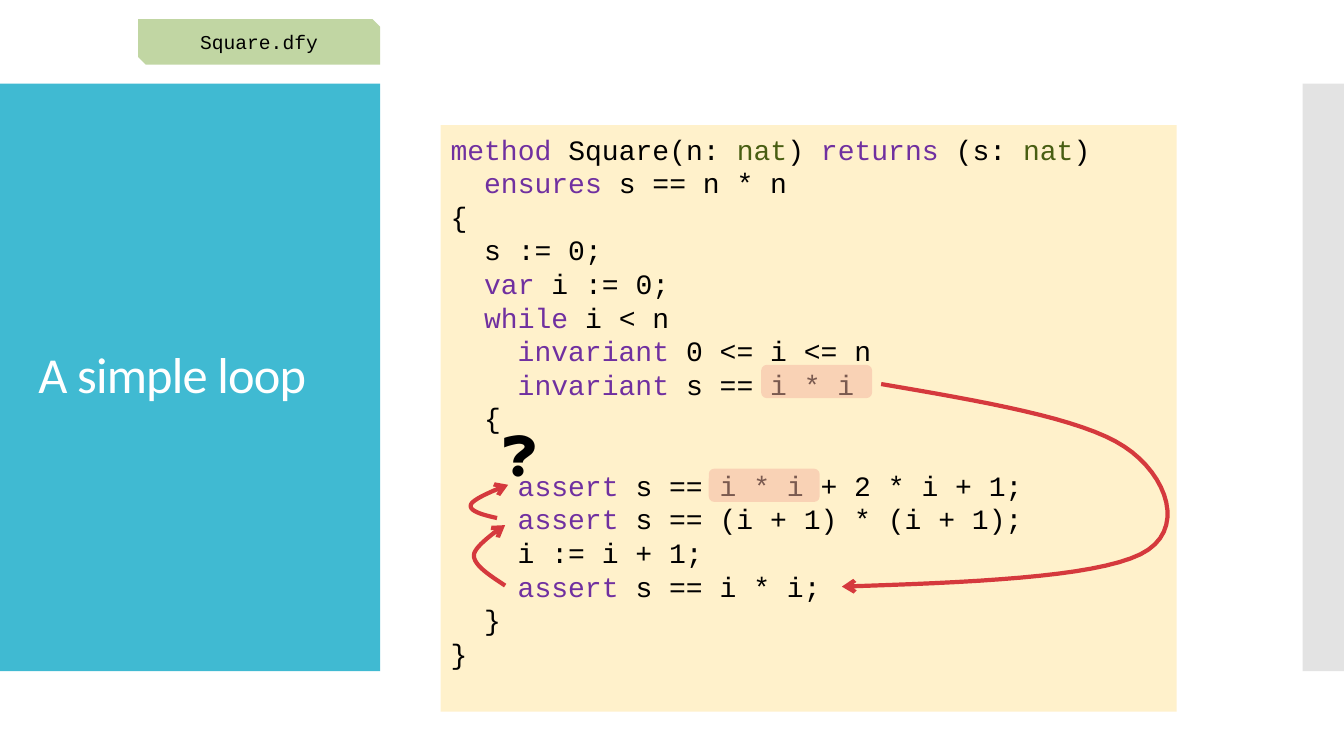
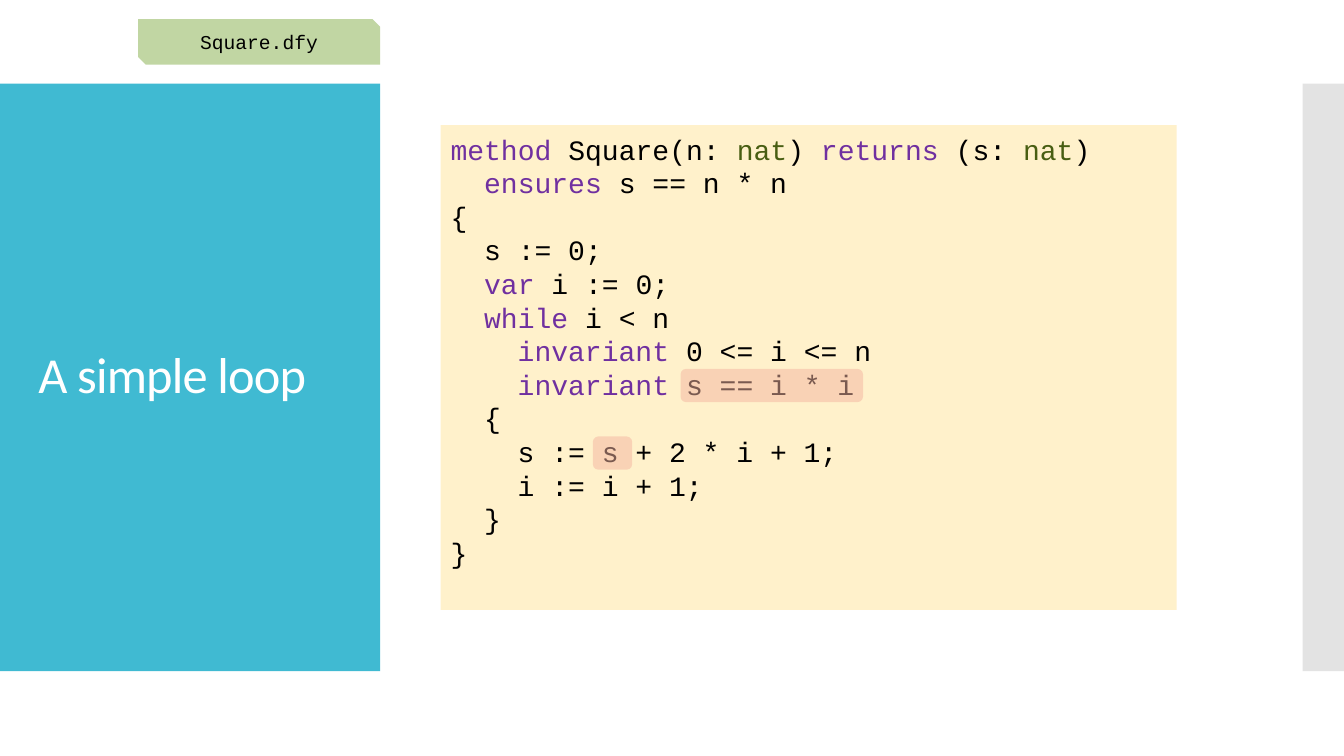
from lxml import etree
from pptx import Presentation
from pptx.dml.color import RGBColor
from pptx.enum.shapes import MSO_SHAPE
from pptx.enum.text import MSO_ANCHOR, MSO_AUTO_SIZE, PP_ALIGN
from pptx.oxml.ns import qn
from pptx.util import Pt

RECT, ROUND, SNIP = MSO_SHAPE.RECTANGLE, MSO_SHAPE.ROUNDED_RECTANGLE, MSO_SHAPE.SNIP_2_DIAG_RECTANGLE
LEFT, CENTER = PP_ALIGN.LEFT, PP_ALIGN.CENTER
TOP, MIDDLE = MSO_ANCHOR.TOP, MSO_ANCHOR.MIDDLE
FIXED = MSO_AUTO_SIZE.NONE
PX = 9144
SANS, MONO = "Calibri", "Courier New"
HUES = {"blue": "40BAD2", "gray": "C8C8C8", "white": "FFFFFF", "black": "000000", "cream": "FFF1CB",
        "green": "C1D6A3", "peach": "F4B4A0", "red": "D5393D", "key": "7030A0", "type": "485E12"}
WORDS = {"nat": "type"}
for word in ("method", "returns", "ensures", "var", "while", "invariant", "assert"):
    WORDS[word] = "key"

HEAD = """|method| Square(n: |nat|) |returns| (s: |nat|)
  |ensures| s == n * n
{
  s := 0;
  |var| i := 0;
  |while| i < n
    |invariant| 0 <= i <= n
    |invariant| s == i * i
  {
"""
PROOF = """
    |assert| s == i * i + 2 * i + 1;
    |assert| s == (i + 1) * (i + 1);
    i := i + 1;
    |assert| s == i * i;
  }
}"""
LOOP = """    s := s + 2 * i + 1;
    i := i + 1;
  }
}"""

PAGES = [
    {"code": HEAD + PROOF, "height": 582,
     "marks": [(703, 465, 110), (755, 362, 110)],
     "query": (488, 413, 77, 71),
     "curves": [
         [(501, 581), (486, 571), (470, 561), (470, 551), (470, 541), (501, 521), (501, 521)],
         [(493, 514), (479, 511), (465, 507), (467, 501), (468, 496), (486, 488), (504, 481)],
         [(874, 381), (973, 398), (1073, 415), (1115, 443), (1158, 471), (1178, 527), (1131, 550),
          (1084, 573), (959, 578), (835, 582)]]},
    {"code": HEAD + LOOP, "height": 481,
     "marks": [(675, 366, 181), (588, 433, 39)],
     "query": None, "curves": []},
]


def write(shape, text, font=SANS, size=20, hue="black", align=LEFT, anchor=TOP, lead=1.0, track=0, top=5):
    frame = shape.text_frame
    frame.auto_size = FIXED
    frame.word_wrap = True
    frame.vertical_anchor = anchor
    frame.margin_top = top * PX
    para, gap = frame.paragraphs[0], 0
    for num, line in enumerate(text.split("\n")):
        if not line:
            gap += lead
            continue
        if num:
            para = frame.add_paragraph()
        para.alignment = align
        para.line_spacing = lead
        if gap:
            para.space_before, gap = Pt(gap / Pt(1)), 0
        body = line.lstrip(" ")
        pad = len(line) - len(body)
        if pad:
            props = para._p.get_or_add_pPr()
            props.set("marL", str(Pt(pad * size * 0.6)))
            props.set("indent", "0")
        for part in filter(None, body.split("|")):
            run = para.add_run()
            run.text = part
            run.font.name = font
            run.font.size = Pt(size)
            run.font.color.rgb = RGBColor.from_string(HUES[WORDS.get(part, hue)])
            if track:
                run.font._element.set("spc", str(track))


def draw(slide, kind, x, y, w, h, hue, alpha=100):
    shape = slide.shapes.add_shape(kind, x * PX, y * PX, w * PX, h * PX)
    shape.shadow.inherit = False
    shape.line.fill.background()
    shape.fill.solid()
    shape.fill.fore_color.rgb = RGBColor.from_string(HUES[hue])
    if alpha < 100:
        color = shape.element.spPr.find(qn("a:solidFill"))[0]
        etree.SubElement(color, qn("a:alpha"), val=str(alpha * 1000))
    return shape


deck = Presentation()
deck.slide_width, deck.slide_height = 1333 * PX, 750 * PX
layout = deck.slide_layouts[5]
slides = [deck.slides.add_slide(layout) for page in PAGES]

bands = [draw(slides[0], RECT, 0, 83, 377, 583, "blue"),
         draw(slides[0], RECT, 1292, 83, 41, 583, "gray", alpha=50)]
for spot, band in enumerate(bands, 2):
    layout.shapes.element.insert(spot, band.element)
for holder in list(layout.placeholders):
    if holder.placeholder_format.idx:
        holder.element.getparent().remove(holder.element)
    else:
        holder.left, holder.top, holder.width, holder.height = 28 * PX, 123 * PX, 322 * PX, 503 * PX

for slide, page in zip(slides, PAGES):
    write(slide.shapes.title, "A simple loop", size=36, hue="white", anchor=MIDDLE, lead=0.9, track=-60)
    panel = draw(slide, RECT, 437, 124, 730, page["height"], "cream")
    write(panel, page["code"], font=MONO, lead=Pt(24), top=7)
    tab = draw(slide, SNIP, 137, 19, 240, 45, "green")
    write(tab, "Square.dfy", font=MONO, size=14, align=CENTER, anchor=MIDDLE)

    if page["query"]:
        x, y, w, h = page["query"]
        query = slide.shapes.add_textbox(x * PX, y * PX, w * PX, h * PX)
        write(query, "❓", size=36)

    for x, y, w in page["marks"]:
        draw(slide, ROUND, x, y, w, 33, "peach", alpha=50)

    for knots in page["curves"]:
        trail = []
        for at in range(0, len(knots) - 1, 3):
            for step in range(1, 17):
                t = step / 16
                rates = ((1 - t) ** 3, 3 * t * (1 - t) ** 2, 3 * t * t * (1 - t), t ** 3)
                trail.append(tuple(round(sum(r * k[axis] for r, k in zip(rates, knots[at:at + 4])) * PX)
                                   for axis in (0, 1)))
        pen = slide.shapes.build_freeform(knots[0][0] * PX, knots[0][1] * PX)
        pen.add_line_segments(trail, close=False)
        curve = pen.convert_to_shape()
        curve.shadow.inherit = False
        curve.fill.background()
        curve.line.width = Pt(3)
        curve.line.color.rgb = RGBColor.from_string(HUES["red"])
        stroke = curve.element.spPr.find(qn("a:ln"))
        etree.SubElement(stroke, qn("a:round"))
        etree.SubElement(stroke, qn("a:tailEnd"), type="arrow")

deck.save("out.pptx")
